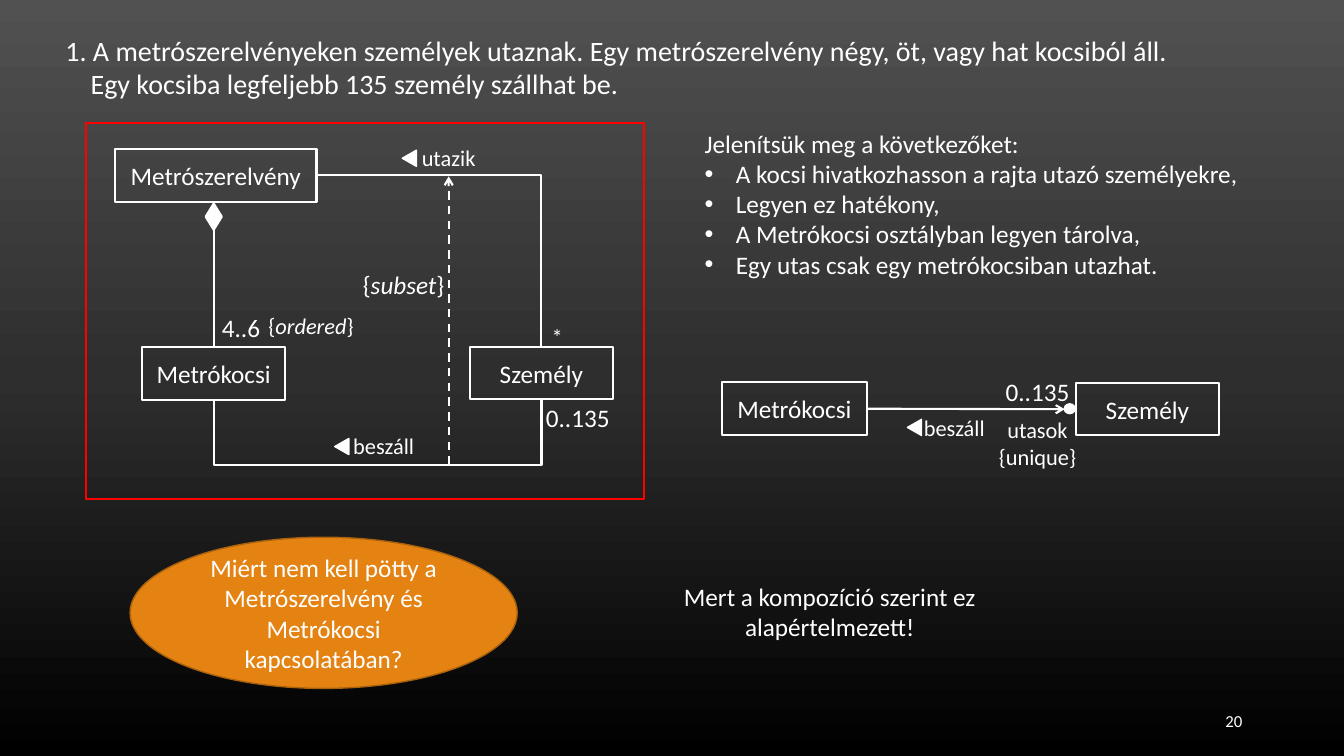
import copy
from dataclasses import dataclass

from pptx import Presentation, util as u
from pptx.dml.color import RGBColor
from pptx.enum import dml, shapes, text
from pptx.oxml import ns, xmlchemy


@dataclass(frozen=True)
class Theme:
    """Colours, font and sizes of the slide."""
    font: str = "Calibri"
    white: str = "FFFFFF"
    frame: str = "FF0000"
    question: str = "E48312"
    question_edge: str = "A9610D"
    backdrop: tuple = ((0, "515151"), (0.5, "2E2E2E"), (1, "000000"))
    title: int = 20
    body: int = 18
    label: int = 16
    footer: int = 12
    stroke: float = 1.5
    thin: float = 1


THEME = Theme()
SHAPE = shapes.MSO_SHAPE
LEFT, CENTER, RIGHT = text.PP_ALIGN.LEFT, text.PP_ALIGN.CENTER, text.PP_ALIGN.RIGHT
TOP, SIDE_LEFT, BOTTOM, SIDE_RIGHT = range(4)


def apply(target, values):
    """Set every attribute in values on target."""
    for name, value in values.items():
        setattr(target, name, value)


def add_xml(parent, tag, **attributes):
    """Append a drawing element with attributes to parent."""
    child = xmlchemy.OxmlElement(tag)
    for name, value in attributes.items():
        child.set(name, str(value))
    parent.append(child)
    return child


def paint_backdrop(slide):
    """Fill the background with the vertical theme gradient."""
    fill = slide.background.fill
    fill.gradient()
    fill.gradient_angle = 270
    stops = slide.element.find(".//" + ns.qn("a:gsLst"))
    stops.insert(1, copy.deepcopy(stops[0]))
    for stop, (position, color) in zip(fill.gradient_stops, THEME.backdrop):
        stop.color.rgb = RGBColor.from_string(color)
        stop.position = position


def write(frame, paragraphs, size, align):
    """Write paragraphs, each a string or a list of (text, italic) runs."""
    for index, content in enumerate(paragraphs):
        paragraph = frame.paragraphs[0] if index == 0 else frame.add_paragraph()
        paragraph.alignment = align
        runs = [(content, False)] if isinstance(content, str) else content
        for words, italic in runs:
            run = paragraph.add_run()
            run.text = words
            apply(run.font, {"name": THEME.font, "size": u.Pt(size), "italic": italic})
            run.font.color.rgb = RGBColor.from_string(THEME.white)


def indent(paragraph, margin, hanging=0, bullet=None):
    """Indent a paragraph and optionally give it a bullet."""
    properties = paragraph._p.get_or_add_pPr()
    properties.set("marL", str(u.Inches(margin)))
    properties.set("indent", str(u.Inches(-hanging)))
    if bullet:
        add_xml(properties, "a:buFont", typeface="Arial")
        add_xml(properties, "a:buChar", char=bullet)


def add_text(parent, box, paragraphs, size=THEME.body, align=CENTER, wrap=False,
             anchor=text.MSO_ANCHOR.TOP):
    """Add a text box and return its text frame."""
    frame = parent.add_textbox(*map(u.Inches, box)).text_frame
    apply(frame, {"word_wrap": wrap, "vertical_anchor": anchor,
                  "auto_size": text.MSO_AUTO_SIZE.SHAPE_TO_FIT_TEXT})
    write(frame, paragraphs, size, align)
    return frame


def style_line(line, color=THEME.white, width=THEME.stroke):
    """Colour and size a line."""
    line.color.rgb = RGBColor.from_string(color)
    line.width = u.Pt(width)


def add_figure(parent, kind, box, fill=None, edge=THEME.white, width=THEME.stroke,
               words=None):
    """Add a preset shape, filled or hollow, with optional centred words."""
    shape = parent.add_shape(kind, *map(u.Inches, box))
    shape.shadow.inherit = False
    if fill:
        shape.fill.solid()
        shape.fill.fore_color.rgb = RGBColor.from_string(fill)
    else:
        shape.fill.background()
    style_line(shape.line, edge, width)
    if words:
        apply(shape.text_frame, {"word_wrap": True,
                                 "vertical_anchor": text.MSO_ANCHOR.MIDDLE})
        write(shape.text_frame, [words], THEME.body, CENTER)
    return shape


def add_class(parent, name, box):
    """Add a hollow class box."""
    return add_figure(parent, SHAPE.RECTANGLE, box, words=name)


def add_direction(parent, left, top):
    """Add a small triangle that points left."""
    triangle = add_figure(parent, SHAPE.ISOSCELES_TRIANGLE, (left, top, 0.16, 0.14),
                          THEME.white, width=THEME.thin)
    triangle.rotation = 270


def add_line(parent, start, end, begin=None, finish=None, arrow=False, dashed=False,
             kind=shapes.MSO_CONNECTOR.STRAIGHT):
    """Add a connector, joined to (shape, side) pairs where given."""
    connector = parent.add_connector(kind, *map(u.Inches, start + end))
    if begin:
        connector.begin_connect(*begin)
    if finish:
        connector.end_connect(*finish)
    style_line(connector.line)
    if dashed:
        connector.line.dash_style = dml.MSO_LINE.DASH
    if arrow:
        add_xml(connector.line._get_or_add_ln(), "a:tailEnd", type="arrow")
    add_xml(connector._element.spPr, "a:effectLst")
    return connector


def add_bent(parent, start, end, begin, finish, preset, turn, flips, bend=None):
    """Add an elbow connector that leaves its start vertically."""
    connector = add_line(parent, start, end, begin, finish,
                         kind=shapes.MSO_CONNECTOR.ELBOW)
    run, rise = abs(end[0] - start[0]), abs(end[1] - start[1])
    middle_x, middle_y = (start[0] + end[0]) / 2, (start[1] + end[1]) / 2
    apply(connector, {"left": u.Inches(middle_x - rise / 2),
                      "top": u.Inches(middle_y - run / 2),
                      "width": u.Inches(rise), "height": u.Inches(run)})
    properties = connector._element.spPr
    frame = properties.find(ns.qn("a:xfrm"))
    frame.set("rot", str(turn * 60000))
    for name in ("flipH", "flipV"):
        frame.set(name, str(int(name in flips)))
    geometry = properties.find(ns.qn("a:prstGeom"))
    geometry.set("prst", preset)
    if bend is not None:
        guides = geometry.find(ns.qn("a:avLst"))
        add_xml(guides, "a:gd", name="adj1", fmla=f"val {round(bend * 100000)}")


def draw_train_model(slide):
    """Draw the framed class diagram of trains, cars and people."""
    group = slide.shapes.add_group_shape().shapes
    train = add_class(group, "Metrószerelvény", (1.14, 1.48, 2, 0.52))
    car = add_class(group, "Metrókocsi", (1.41, 3.44, 1.42, 0.53))
    person = add_class(group, "Személy", (4.66, 3.44, 1.42, 0.52))
    diamond = add_figure(group, SHAPE.DIAMOND, (2.04, 2.02, 0.16, 0.26), THEME.white)
    add_line(group, (2.12, 3.44), (2.12, 2.28), (car, TOP), (diamond, BOTTOM))
    add_bent(group, (5.37, 3.44), (3.14, 1.74), (person, TOP), (train, SIDE_RIGHT),
             "bentConnector2", 270, ("flipV",))
    add_bent(group, (2.12, 3.97), (5.37, 3.96), (car, BOTTOM), (person, BOTTOM),
             "bentConnector3", 90, ("flipH", "flipV"), bend=-65)
    add_text(group, (2.1, 3.05, 0.58, 0.4), ["4..6"])
    add_direction(group, 3.31, 4.36)
    add_text(group, (3.4, 4.24, 0.81, 0.37), ["beszáll"], THEME.label)
    add_text(group, (2.55, 3.05, 1.07, 0.37),
             [[("{", False), ("ordered", True), ("}", False)]], THEME.label)
    add_text(group, (5.31, 3.94, 0.84, 0.4), ["0..135"])
    add_direction(group, 3.98, 1.5)
    add_text(group, (4.08, 1.38, 0.74, 0.37), ["utazik"], THEME.label)
    add_text(group, (5.37, 3.16, 0.31, 0.37), ["*"], THEME.label, wrap=True)
    add_line(group, (4.45, 4.61), (4.45, 1.75), arrow=True, dashed=True)
    add_text(group, (3.5, 2.62, 1.03, 0.4),
             [[("{", False), ("subset", True), ("}", False)]], align=LEFT)
    add_figure(group, SHAPE.RECTANGLE, (0.85, 1.22, 5.54, 3.73), edge=THEME.frame)


def draw_boarding_model(slide):
    """Draw the association in which a car refers to its passengers."""
    canvas = slide.shapes
    car = add_class(canvas, "Metrókocsi", (7.16, 3.79, 1.44, 0.53))
    add_class(canvas, "Személy", (10.67, 3.8, 1.42, 0.52))
    add_line(canvas, (8.6, 4.06), (10.56, 4.06), (car, SIDE_RIGHT), arrow=True)
    add_figure(canvas, SHAPE.OVAL, (10.56, 4.01, 0.1, 0.09), THEME.white)
    add_text(canvas, (9.87, 3.68, 0.84, 0.4), ["0..135"])
    add_direction(canvas, 8.99, 4.17)
    add_text(canvas, (9.06, 4.06, 0.81, 0.37), ["beszáll"], THEME.label)
    add_text(canvas, (9.8, 4.08, 0.98, 0.64), ["utasok", "{unique}"], THEME.label)


def main():
    """Build and save the slide."""
    presentation = Presentation()
    apply(presentation, {"slide_width": u.Inches(13.33), "slide_height": u.Inches(7.5)})
    slide = presentation.slides.add_slide(presentation.slide_layouts[6])
    paint_backdrop(slide)
    title = add_text(slide.shapes, (0.55, 0.28, 11.29, 0.77), [
        "1. A metrószerelvényeken személyek utaznak. "
        "Egy metrószerelvény négy, öt, vagy hat kocsiból áll.",
        "Egy kocsiba legfeljebb 135 személy szállhat be."], THEME.title, LEFT)
    indent(title.paragraphs[1], 0.25)
    draw_train_model(slide)
    add_text(slide.shapes, (9.42, 6.95, 3, 0.4), ["20"], THEME.footer, RIGHT, True,
             text.MSO_ANCHOR.MIDDLE)
    tasks = add_text(slide.shapes, (6.89, 1.22, 5.59, 1.62), [
        "Jelenítsük meg a következőket:",
        "A kocsi hivatkozhasson a rajta utazó személyekre,",
        "Legyen ez hatékony,",
        "A Metrókocsi osztályban legyen tárolva,",
        "Egy utas csak egy metrókocsiban utazhat."], align=LEFT, wrap=True)
    for paragraph in tasks.paragraphs[1:]:
        indent(paragraph, 0.31, 0.31, "•")
    draw_boarding_model(slide)
    add_figure(slide.shapes, SHAPE.OVAL, (1.29, 5.33, 3.84, 1.5), THEME.question,
               THEME.question_edge, THEME.thin,
               "Miért nem kell pötty a Metrószerelvény és Metrókocsi kapcsolatában?")
    add_text(slide.shapes, (6.08, 5.72, 4.3, 0.71),
             ["Mert a kompozíció szerint ez alapértelmezett!"], wrap=True)
    presentation.save("out.pptx")


if __name__ == "__main__":
    main()
